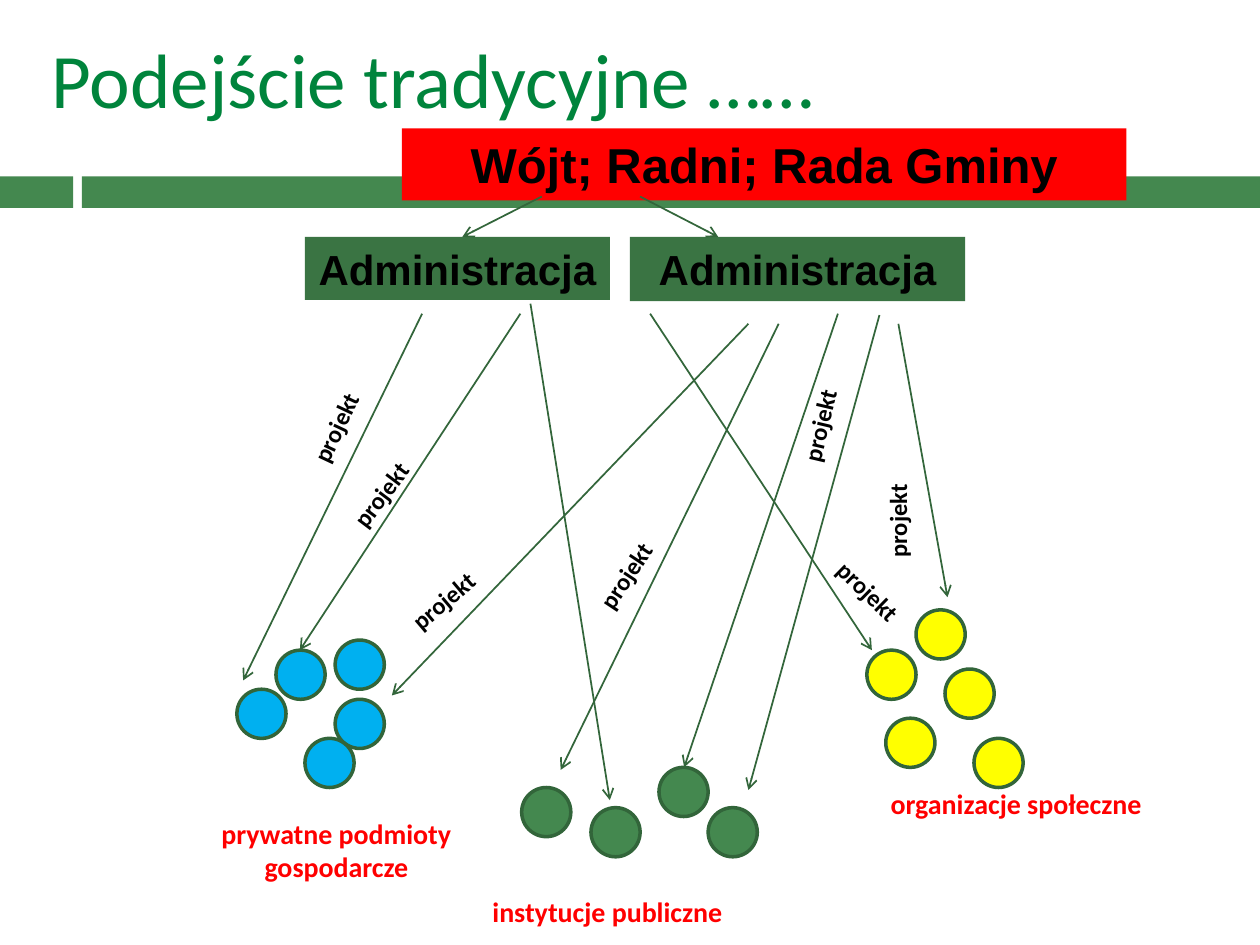
from typing import NamedTuple

import pptx
import pptx.dml.color
import pptx.enum.shapes
import pptx.enum.text
import pptx.oxml
import pptx.oxml.ns
import pptx.util

Inches = pptx.util.Inches
SHAPES = pptx.enum.shapes.MSO_SHAPE
ALIGN = pptx.enum.text.PP_ALIGN

COLORS = {
    "band": "44884F", "title": "00843C", "office": "3A7443", "council": "FF0000",
    "private": "00B0F0", "public": "44884F", "social": "FFFF00",
    "outline": "32653A", "arrow": "33663B", "caption": "FF0000", "text": "000000",
}
DOT_SIZE = 0.39


class Box(NamedTuple):
    left: float
    top: float
    width: float
    height: float


class Style(NamedTuple):
    size: int
    font: str
    color: str
    bold: bool = True
    align: ALIGN = ALIGN.LEFT


class Label(NamedTuple):
    text: str
    box: Box
    style: Style
    rotation: float = 0


class Bar(NamedTuple):
    text: str
    box: Box
    color: str
    size: int


class Arrow(NamedTuple):
    x1: float
    y1: float
    x2: float
    y2: float


CAPTION = Style(16, "Calibri", "caption")
PROJECT = Style(14, "Calibri", "text")

BANDS = [Box(0, 1.4, 0.58, 0.25), Box(0.65, 1.4, 9.35, 0.25)]

# Left and top of each circle, by group
DOTS = {
    "private": [(2.66, 5.55), (2.66, 5.08), (2.42, 5.86), (2.19, 5.16), (1.88, 5.47)],
    "social": [(7.27, 4.84), (7.5, 5.31), (7.73, 5.86), (7.03, 5.7), (6.88, 5.16)],
    "public": [(5.62, 6.41), (4.69, 6.41), (5.23, 6.09), (4.14, 6.25)],
}

PROJECT_ARROWS = [
    Arrow(4.13, 2.49, 2.38, 5.16), Arrow(4.21, 2.41, 4.84, 6.35),
    Arrow(5.94, 2.57, 3.11, 5.52), Arrow(5.16, 2.49, 6.92, 5.16),
    Arrow(7.13, 2.57, 7.52, 4.74), Arrow(6.65, 2.49, 5.43, 6.09),
    Arrow(6.18, 2.57, 4.45, 6.11), Arrow(6.98, 2.5, 5.94, 6.27),
    Arrow(3.35, 2.49, 1.93, 5.4),
]
COUNCIL_ARROWS = [Arrow(5.08, 1.56, 5.7, 1.88), Arrow(4.3, 1.56, 3.67, 1.88)]

CAPTIONS = [
    Label("prywatne podmioty gospodarcze", Box(1.46, 6.43, 2.42, 0.64),
          CAPTION._replace(align=ALIGN.CENTER)),
    Label("organizacje społeczne", Box(6.97, 6.19, 2.42, 0.37), CAPTION),
    Label("instytucje publiczne", Box(3.81, 7.05, 2.42, 0.37), CAPTION),
]

# Left, top, width and rotation of each project label
PROJECT_LABELS = [
    Label("projekt", Box(left, top, width, 0.33), PROJECT, rotation)
    for left, top, width, rotation in [
        (6.69, 3.93, 0.86, 270), (6.07, 3.16, 0.89, 283.2),
        (2.61, 3.72, 0.88, 307.1), (2.26, 3.21, 0.82, 295.2),
        (3.11, 4.56, 0.91, 319.7), (4.55, 4.36, 0.88, 303.6),
        (6.48, 4.58, 0.94, 44.3),
    ]
]

BARS = [
    Bar("Wójt; Radni; Rada Gminy", Box(3.19, 1.02, 5.75, 0.57), "council", 28),
    Bar("Administracja", Box(5, 1.88, 2.66, 0.51), "office", 24),
    Bar("Administracja", Box(2.42, 1.88, 2.42, 0.5), "office", 24),
]


def rgb(name: str) -> pptx.dml.color.RGBColor:
    return pptx.dml.color.RGBColor.from_string(COLORS[name])


def write_text(shape, text: str, style: Style, anchor=pptx.enum.text.MSO_ANCHOR.TOP) -> None:
    frame = shape.text_frame
    frame.word_wrap = True
    frame.vertical_anchor = anchor
    paragraph = frame.paragraphs[0]
    paragraph.alignment = style.align
    run = paragraph.add_run()
    run.text = text
    formats = {"size": pptx.util.Pt(style.size), "name": style.font, "bold": style.bold}
    for attribute, value in formats.items():
        setattr(run.font, attribute, value)
    run.font.color.rgb = rgb(style.color)


def add_filled(slide, kind: SHAPES, box: Box, color: str, outline: float = 0):
    shape = slide.shapes.add_shape(kind, *map(Inches, box))
    shape.shadow.inherit = False
    shape.fill.solid()
    shape.fill.fore_color.rgb = rgb(color)
    if outline:
        shape.line.color.rgb = rgb("outline")
        shape.line.width = pptx.util.Pt(outline)
    else:
        shape.line.fill.background()
    return shape


def add_dots(slide, group: str) -> None:
    for left, top in DOTS[group]:
        add_filled(slide, SHAPES.OVAL, Box(left, top, DOT_SIZE, DOT_SIZE), group, 2)


def add_label(slide, label: Label) -> None:
    shape = slide.shapes.add_textbox(*map(Inches, label.box))
    shape.rotation = label.rotation
    write_text(shape, label.text, label.style)


def add_arrow(slide, arrow: Arrow) -> None:
    connector = slide.shapes.add_connector(
        pptx.enum.shapes.MSO_CONNECTOR.STRAIGHT, *map(Inches, arrow))
    connector.line.color.rgb = rgb("arrow")
    connector.line.width = pptx.util.Pt(1)
    qn = pptx.oxml.ns.qn
    properties = connector.element.find(qn("p:spPr"))
    line = properties.find(qn("a:ln"))
    line.append(line.makeelement(qn("a:tailEnd"), {"type": "arrow"}))
    properties.append(properties.makeelement(qn("a:effectLst"), {}))


def main() -> None:
    presentation = pptx.Presentation()
    presentation.slide_width, presentation.slide_height = Inches(10), Inches(7.5)
    slide = presentation.slides.add_slide(presentation.slide_layouts[5])

    # Title over the two-part band
    for box in BANDS:
        add_filled(slide, SHAPES.RECTANGLE, box, "band")
    title = slide.shapes.title
    frame = {"left": 0.31, "top": 0.16, "width": 9.5, "height": 0.92}
    for attribute, value in frame.items():
        setattr(title, attribute, Inches(value))
    write_text(title, "Podejście tradycyjne ……", Style(44, "Calibri", "title", False),
               pptx.enum.text.MSO_ANCHOR.MIDDLE)

    # Recipients and the projects that reach them
    for group in ("private", "social"):
        add_dots(slide, group)
    for arrow in PROJECT_ARROWS:
        add_arrow(slide, arrow)
    for label in PROJECT_LABELS + CAPTIONS:
        add_label(slide, label)
    add_dots(slide, "public")

    # Council and its offices
    for bar in BARS:
        shape = add_filled(slide, SHAPES.RECTANGLE, bar.box, bar.color)
        write_text(shape, bar.text, Style(bar.size, "Arial", "text", align=ALIGN.CENTER))
    for arrow in COUNCIL_ARROWS:
        add_arrow(slide, arrow)

    presentation.save("out.pptx")


if __name__ == "__main__":
    main()
